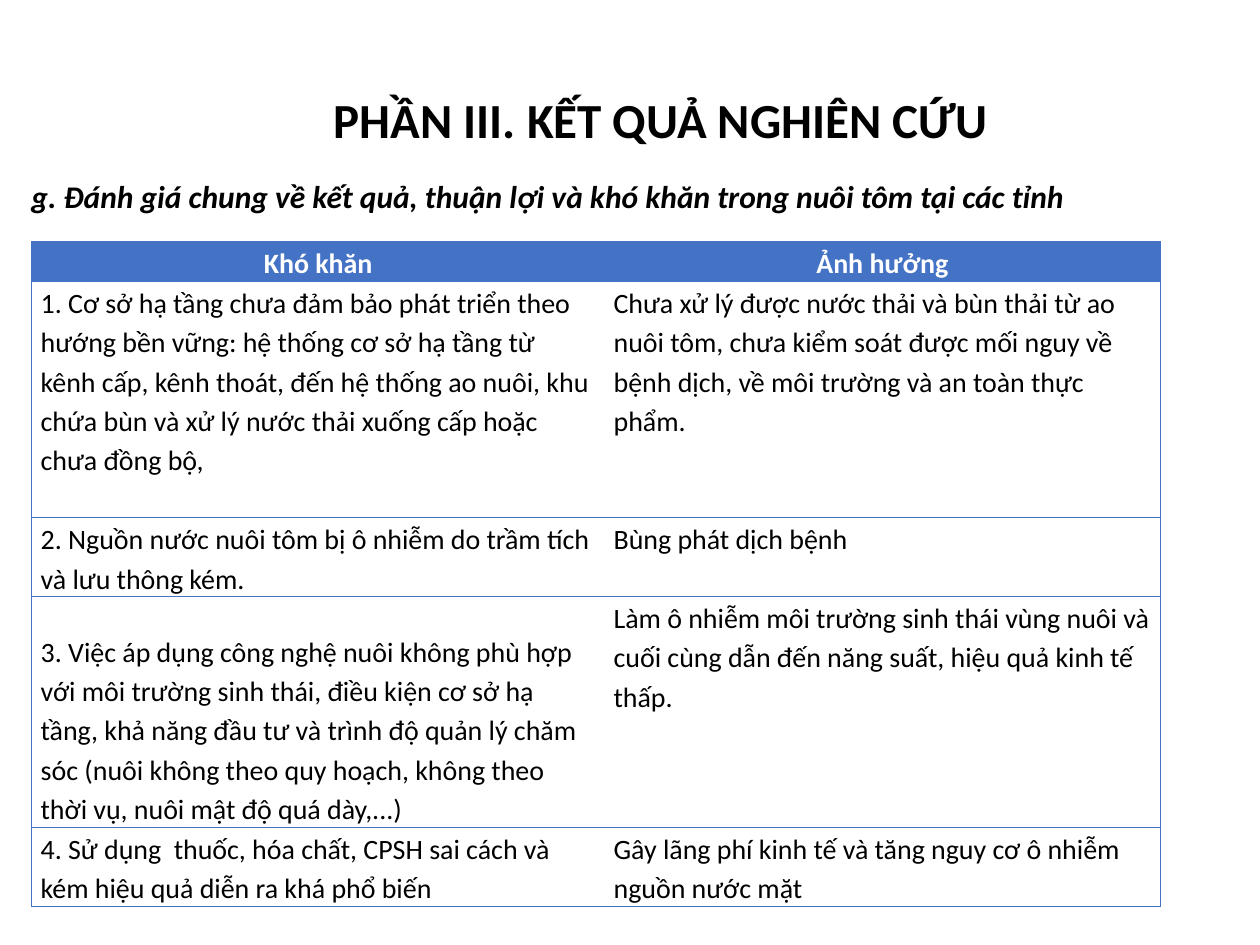
from dataclasses import dataclass

from lxml import etree
from pptx import Presentation
from pptx.dml.color import RGBColor
from pptx.enum.text import MSO_ANCHOR, MSO_AUTO_SIZE, PP_ALIGN
from pptx.oxml.ns import qn
from pptx.util import Cm, Pt

CENTER, LEFT = PP_ALIGN.CENTER, PP_ALIGN.LEFT
TOP, MIDDLE = MSO_ANCHOR.TOP, MSO_ANCHOR.MIDDLE
NO_AUTOFIT = MSO_AUTO_SIZE.NONE

BLACK = RGBColor(0x00, 0x00, 0x00)
WHITE = RGBColor(0xFF, 0xFF, 0xFF)
BLUE = RGBColor(0x44, 0x72, 0xC4)
FONT = "Calibri"
COLUMN_WIDTHS = (11.55, 11.2)
BORDER_WIDTH = Pt(0.5)


@dataclass
class TextStyle:
    size: int
    color: RGBColor = BLACK
    bold: bool = False
    italic: bool = False
    align: PP_ALIGN = LEFT
    line_spacing: float = 1.15
    space_before: int = 0


@dataclass
class TableRow:
    difficulty: str
    effect: str
    height: float
    first_margin_top: float = 0


TITLE_STYLE = TextStyle(28, bold=True, align=CENTER, line_spacing=0.9)
SUBTITLE_STYLE = TextStyle(18, bold=True, italic=True, line_spacing=0.9, space_before=10)
HEADER_STYLE = TextStyle(16, color=WHITE, bold=True, align=CENTER)
CELL_STYLE = TextStyle(16)

ROWS = [
    TableRow("Khó khăn", "Ảnh hưởng", 0.81),
    TableRow(
        "1. Cơ sở hạ tầng chưa đảm bảo phát triển theo hướng bền vững: hệ thống cơ sở "
        "hạ tầng từ kênh cấp, kênh thoát, đến hệ thống ao nuôi, khu chứa bùn và xử lý "
        "nước thải xuống cấp hoặc chưa đồng bộ,",
        "Chưa xử lý được nước thải và bùn thải từ ao nuôi tôm, chưa kiểm soát được mối "
        "nguy về bệnh dịch, về môi trường và an toàn thực phẩm.",
        4.76,
    ),
    TableRow(
        "2. Nguồn nước nuôi tôm bị ô nhiễm do trầm tích và lưu thông kém.",
        "Bùng phát dịch bệnh",
        1.59,
    ),
    TableRow(
        "3. Việc áp dụng công nghệ nuôi không phù hợp với môi trường sinh thái, điều kiện "
        "cơ sở hạ tầng, khả năng đầu tư và trình độ quản lý chăm sóc (nuôi không theo quy "
        "hoạch, không theo thời vụ, nuôi mật độ quá dày,...)",
        "Làm ô nhiễm môi trường sinh thái vùng nuôi và cuối cùng dẫn đến năng suất, "
        "hiệu quả kinh tế thấp.",
        4.64,
        first_margin_top=0.68,
    ),
    TableRow(
        "4. Sử dụng  thuốc, hóa chất, CPSH sai cách và kém hiệu quả diễn ra khá phổ biến",
        "Gây lãng phí kinh tế và tăng nguy cơ ô nhiễm nguồn nước mặt",
        1.59,
    ),
]


def write_text(text_frame, text: str, style: TextStyle):
    paragraph = text_frame.paragraphs[0]
    paragraph.alignment = style.align
    paragraph.line_spacing = style.line_spacing
    paragraph.space_before = Pt(style.space_before)
    run = paragraph.add_run()
    run.text = text
    font = run.font
    font.name, font.size = FONT, Pt(style.size)
    font.bold, font.italic = style.bold, style.italic
    font.color.rgb = style.color
    return paragraph


def fill_placeholder(shape, box: tuple, anchor: MSO_ANCHOR, text: str, style: TextStyle):
    shape.left, shape.top, shape.width, shape.height = (Cm(length) for length in box)
    text_frame = shape.text_frame
    text_frame.word_wrap = True
    text_frame.auto_size = NO_AUTOFIT
    text_frame.vertical_anchor = anchor
    return write_text(text_frame, text, style)


def remove_bullet(paragraph) -> None:
    properties = paragraph._p.get_or_add_pPr()
    properties.set("marL", "0")
    properties.set("indent", "0")
    etree.SubElement(properties, qn("a:buNone"))


def set_borders(cell, visible_sides: str) -> None:
    properties = cell._tc.get_or_add_tcPr()
    for side in "LRTB":
        line = etree.SubElement(properties, qn(f"a:ln{side}"), w=str(BORDER_WIDTH))
        if side in visible_sides:
            fill = etree.SubElement(line, qn("a:solidFill"))
            etree.SubElement(fill, qn("a:srgbClr"), val=str(BLUE))
        else:
            etree.SubElement(line, qn("a:noFill"))


def fill_cell(cell, text: str, is_header: bool, sides: str, margin_top: float) -> None:
    cell.margin_left = cell.margin_right = Cm(0.18)
    cell.margin_top, cell.margin_bottom = Cm(margin_top), Cm(0)
    cell.vertical_anchor = TOP
    set_borders(cell, sides)
    if is_header:
        cell.fill.solid()
        cell.fill.fore_color.rgb = BLUE
    else:
        cell.fill.background()
    write_text(cell.text_frame, text, HEADER_STYLE if is_header else CELL_STYLE)


def add_difficulty_table(slide, rows: list[TableRow]) -> None:
    height = sum(row.height for row in rows)
    frame = slide.shapes.add_table(
        len(rows), len(COLUMN_WIDTHS), Cm(0.64), Cm(4.87), Cm(sum(COLUMN_WIDTHS)), Cm(height)
    )
    table = frame.table
    table.horz_banding = False
    for column, width in zip(table.columns, COLUMN_WIDTHS):
        column.width = Cm(width)
    for index, row in enumerate(rows):
        table.rows[index].height = Cm(row.height)
        is_header = index == 0
        fill_cell(table.cell(index, 0), row.difficulty, is_header, "LTB", row.first_margin_top)
        fill_cell(table.cell(index, 1), row.effect, is_header, "RTB", 0)


def main() -> None:
    presentation = Presentation()
    presentation.slide_width, presentation.slide_height = Cm(25.4), Cm(19.05)
    slide = presentation.slides.add_slide(presentation.slide_layouts[1])

    # Title and subtitle
    fill_placeholder(
        slide.shapes.title, (1.24, 1.78, 24.16, 1.4), MIDDLE,
        "PHẦN III. KẾT QUẢ NGHIÊN CỨU", TITLE_STYLE,
    )
    subtitle = fill_placeholder(
        slide.placeholders[1], (0.38, 3.53, 24.59, 6.32), TOP,
        "g. Đánh giá chung về kết quả, thuận lợi và khó khăn trong nuôi tôm tại các tỉnh",
        SUBTITLE_STYLE,
    )
    remove_bullet(subtitle)

    # Difficulties and their effects
    add_difficulty_table(slide, ROWS)

    presentation.save("out.pptx")


if __name__ == "__main__":
    main()
